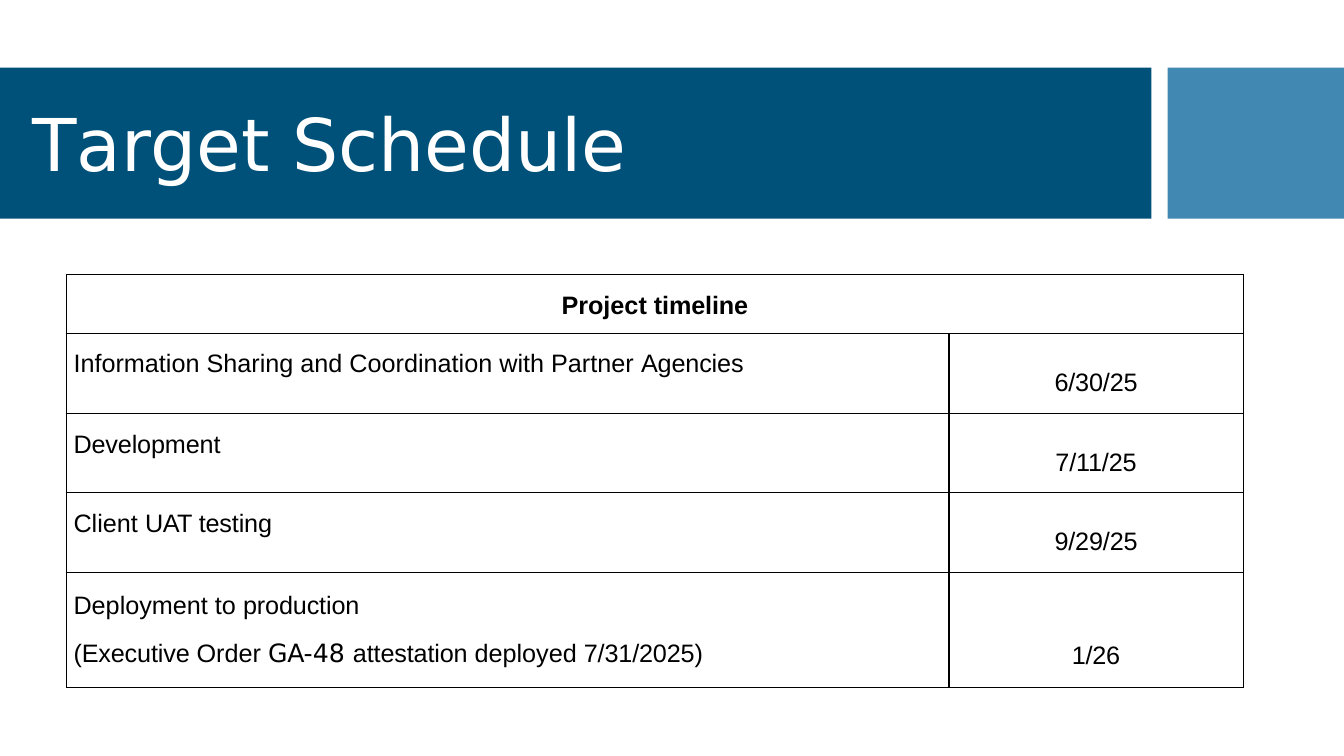
import pptx
import pptx.util
import pptx.dml.color
import pptx.enum.shapes
import pptx.enum.text
import pptx.oxml
import pptx.oxml.ns

Inches, Pt = pptx.util.Inches, pptx.util.Pt
RGBColor = pptx.dml.color.RGBColor
ALIGN = pptx.enum.text.PP_ALIGN
TOP = pptx.enum.text.MSO_ANCHOR.TOP

NAVY = RGBColor(0x00, 0x51, 0x79)
STEEL = RGBColor(0x41, 0x88, 0xB3)
WHITE = RGBColor(0xFF, 0xFF, 0xFF)
BLACK = RGBColor(0x00, 0x00, 0x00)
SANS, ARIAL = "DejaVu Sans", "Arial"

# Each task: paragraphs of (text, letter spacing, font) runs, top inset,
# then the date, its letter spacing and its top inset
TASKS = [
    ([[("Information Sharing and Coordination with Partner ", 0, ARIAL),
       ("Agencies", -0.1, ARIAL)]], 0.16, "6/30/25", -0.1, 0.35),
    ([[("Development", -0.1, ARIAL)]], 0.17, "7/11/25", -0.1, 0.35),
    ([[("Client ", 0, ARIAL), ("UAT ", -0.3, ARIAL), ("testing", -0.1, ARIAL)]],
     0.17, "9/29/25", -0.1, 0.35),
    ([[("Deployment to ", 0, ARIAL), ("production", -0.1, ARIAL)],
      [("(Executive ", -0.1, ARIAL), ("Order ", 0, ARIAL), ("GA-", -0.2, SANS),
       ("48 ", 0, SANS), ("attestation ", -0.1, ARIAL), ("deployed ", 0, ARIAL),
       ("7/31/2025)", -0.1, ARIAL)]], 0.19, "1/26", -0.2, 0.69),
]


def add_runs(p, runs, size, color, bold=False):
    for text, spacing, font in runs:
        r = p.add_run()
        r.text = text
        r.font.name, r.font.size, r.font.bold = font, Pt(size), bold
        r.font.color.rgb = color
        r._r.get_or_add_rPr().set("spc", str(round(spacing * 100)))


def set_borders(cell, widths):
    """Draw black borders; widths are in points: left, right, top, bottom."""
    tc_pr = cell._tc.get_or_add_tcPr()
    for i, (side, width) in enumerate(zip("LRTB", widths)):
        tc_pr.insert(i, pptx.oxml.parse_xml(
            f'<a:ln{side} {pptx.oxml.ns.nsdecls("a")} w="{Pt(width)}">'
            f'<a:solidFill><a:srgbClr val="{BLACK}"/></a:solidFill></a:ln{side}>'))


def fill_cell(cell, paragraphs, left, top, align, bold=False):
    cell.margin_left, cell.margin_top = Inches(left), Inches(top)
    cell.margin_right = cell.margin_bottom = 0
    cell.vertical_anchor = TOP
    for i, runs in enumerate(paragraphs):
        p = cell.text_frame.add_paragraph() if i else cell.text_frame.paragraphs[0]
        p.alignment = align
        if i:
            p.space_before = Pt(14.1)
        add_runs(p, runs, 18, BLACK, bold)


def add_title_band(s, x, y, w, h):
    # Accent block at the right end of the band
    accent_w = 1.75
    sp = s.shapes.add_shape(pptx.enum.shapes.MSO_SHAPE.RECTANGLE,
                            Inches(x + w - accent_w), Inches(y),
                            Inches(accent_w), Inches(h))
    sp.shadow.inherit = False
    sp.fill.solid()
    sp.fill.fore_color.rgb = STEEL
    sp.line.fill.background()

    # Title
    title = s.shapes.title
    title.left, title.top = Inches(x), Inches(y)
    title.width, title.height = Inches(w - accent_w - 0.16), Inches(h)
    title.fill.solid()
    title.fill.fore_color.rgb = NAVY
    tf = title.text_frame
    tf.word_wrap = True
    tf.auto_size = pptx.enum.text.MSO_AUTO_SIZE.NONE
    tf.vertical_anchor = TOP
    tf.margin_left, tf.margin_top = Inches(0.32), Inches(0.31)
    tf.margin_right = tf.margin_bottom = 0
    p = tf.paragraphs[0]
    p.alignment = ALIGN.LEFT
    add_runs(p, [("T", -5.8, SANS), ("arge", 0.1, SANS),
                 ("t Schedule", -0.1, SANS)], 52, WHITE)


def add_timeline(s, x, y, w, h):
    heights = [0.59, 0.79, 0.79, 0.79, 1.14]
    table = s.shapes.add_table(len(heights), 2, Inches(x), Inches(y),
                               Inches(w), Inches(h)).table
    table.first_row = table.horz_banding = False
    for column, share in zip(table.columns, (0.75, 0.25)):
        column.width = Inches(w * share)
    for row, height in zip(table.rows, heights):
        row.height = Inches(height)

    # Plain cells, with thinner lines on the outer edges of the body
    last = len(heights) - 1
    for i, row in enumerate(table.rows):
        for j, cell in enumerate(row.cells):
            cell.fill.background()
            set_borders(cell, (0.5 if i and j == 0 else 1,
                               0.5 if i and j == 1 else 1,
                               1, 0.5 if i == last else 1))

    # Heading
    head = table.cell(0, 0)
    head.merge(table.cell(0, 1))
    fill_cell(head, [[("Project ", 0, ARIAL), ("timeline", -0.1, ARIAL)]],
              0, 0.17, ALIGN.CENTER, bold=True)

    # Tasks and dates
    for i, (task, task_top, date, spacing, date_top) in enumerate(TASKS, 1):
        fill_cell(table.cell(i, 0), task, 0.07, task_top, ALIGN.LEFT)
        fill_cell(table.cell(i, 1), [[(date, spacing, ARIAL)]],
                  0, date_top, ALIGN.CENTER)


def main():
    prs = pptx.Presentation()
    prs.slide_width, prs.slide_height = Inches(13.33), Inches(7.5)
    s = prs.slides.add_slide(prs.slide_layouts[5])
    add_title_band(s, 0, 0.67, 13.33, 1.5)
    add_timeline(s, 0.66, 2.72, 11.67, 4.1)
    prs.save("out.pptx")


if __name__ == "__main__":
    main()
